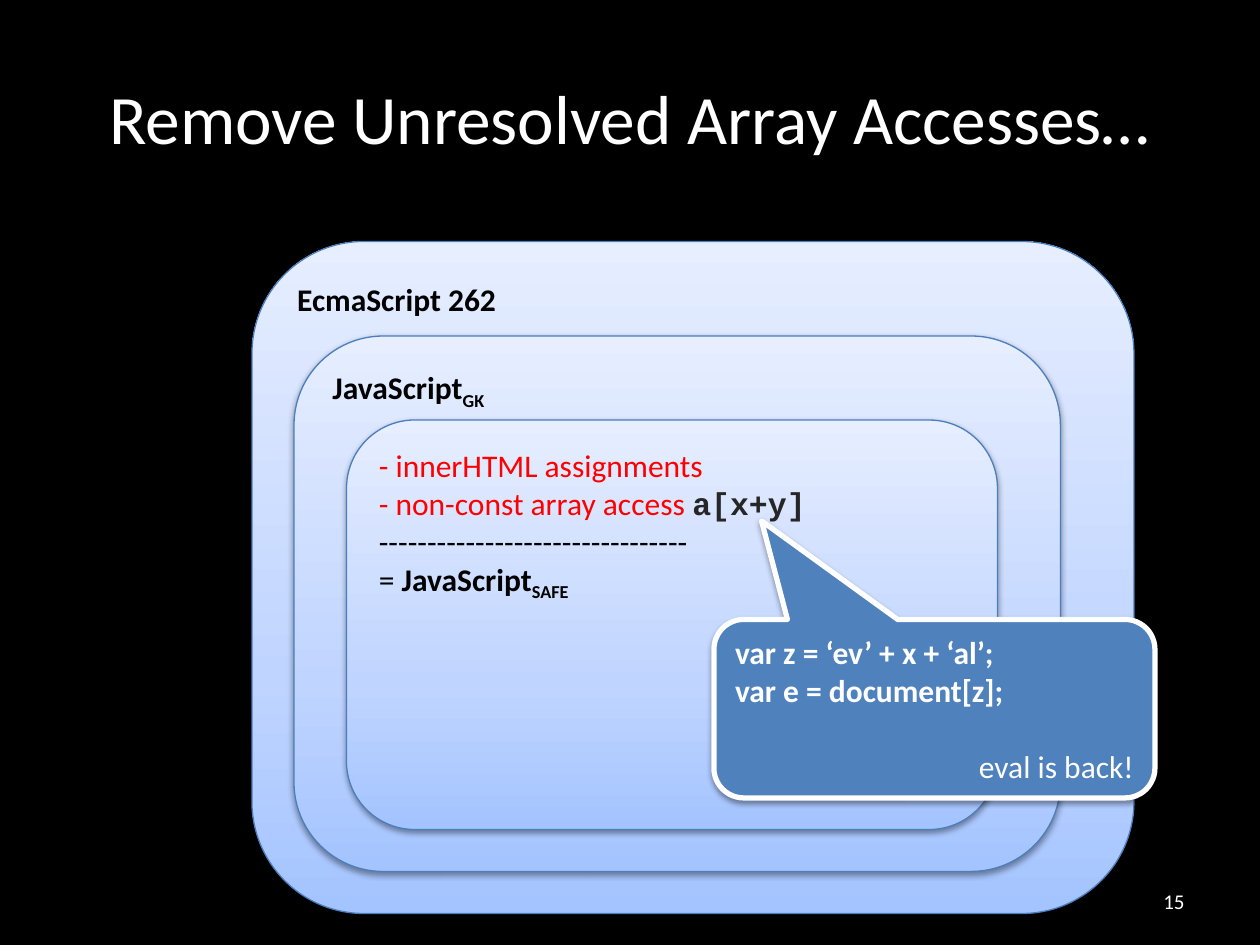
"""Build the slide on removing unresolved array accesses."""
from lxml.etree import SubElement
from pptx import Presentation
from pptx.dml.color import RGBColor
from pptx.enum.shapes import MSO_SHAPE as Shape
from pptx.enum.text import MSO_ANCHOR as Anchor, PP_ALIGN as Align
from pptx.oxml import parse_xml
from pptx.oxml.ns import nsdecls, qn
from pptx.util import Pt

BLACK = RGBColor(0, 0, 0)
WHITE = RGBColor(255, 255, 255)
RED = RGBColor(255, 0, 0)
DARK = RGBColor(0x26, 0x26, 0x26)
BLUE = RGBColor(0x4F, 0x81, 0xBD)
EDGE = RGBColor(0x4B, 0x7E, 0xBC)
GRADIENT = [(0, "A4C4FF"), (35, "BFD4FF"), (100, "E6EEFF")]

TITLE = "Remove Unresolved Array Accesses…"
PAGE_NUMBER = "15"
PLAIN, BOLD, SUB, CODE = "plain", "bold", "sub", "code"
LANGUAGES = [
    ((144, 138, 504, 384), [(BLACK, [("EcmaScript 262", BOLD)])]),
    ((168, 192, 438, 306), [(BLACK, [("JavaScript", BOLD), ("GK", SUB)])]),
    ((198, 240, 372, 234), [
        (RED, [("- innerHTML assignments", PLAIN)]),
        (RED, [("- non-const array access ", PLAIN), ("a[x+y]", CODE)]),
        (BLACK, [("-" * 32, PLAIN)]),
        (BLACK, [("= ", PLAIN), ("JavaScript", BOLD), ("SAFE", SUB)]),
    ]),
]
CALLOUT = (408, 354, 252, 102)
CALLOUT_TIP = (-0.392, -1.052, 0.167)
CALLOUT_LINES = [
    (WHITE, [("var z = ‘ev’ + x + ‘al’;", BOLD)]),
    (WHITE, [("var e = document[z];", BOLD)]),
    (WHITE, [("eval is back!", PLAIN)]),
]


def write(frame, lines, size=18, align=Align.LEFT, anchor=Anchor.TOP):
    frame.word_wrap = True
    frame.vertical_anchor = anchor
    for index, (color, spans) in enumerate(lines):
        para = frame.add_paragraph() if index else frame.paragraphs[0]
        para.alignment = align
        para.font.name, para.font.size = "Calibri", Pt(size)
        para.font.color.rgb = color
        for text, style in spans:
            span = para.add_run()
            span.text = text
            span.font.bold = style != PLAIN
            span.font.color.rgb = color
            if style == SUB:
                span._r.get_or_add_rPr().set("baseline", "-25000")
            elif style == CODE:
                span.font.name = "Courier New"
                span.font.color.rgb = DARK


def add_box(page, kind, place, edge, width):
    box = page.shapes.add_shape(kind, *map(Pt, place))
    box.line.color.rgb, box.line.width = edge, Pt(width)
    box.shadow.inherit = False
    effects = box._element.spPr.find(qn("a:effectLst"))
    shadow = SubElement(effects, qn("a:outerShdw"), blurRad=str(Pt(3.1)),
                        dist=str(Pt(1.6)), dir="5400000", rotWithShape="0")
    color = SubElement(shadow, qn("a:srgbClr"), val="000000")
    SubElement(color, qn("a:alpha"), val="38000")
    return box


def fill_gradient(box):
    stops = "".join(f'<a:gs pos="{position * 1000}"><a:srgbClr val="{color}"/></a:gs>'
                    for position, color in GRADIENT)
    box._element.spPr.find(qn("a:prstGeom")).addnext(parse_xml(
        f'<a:gradFill {nsdecls("a")} rotWithShape="1"><a:gsLst>{stops}</a:gsLst>'
        '<a:lin ang="16200000" scaled="0"/></a:gradFill>'))


def main():
    deck = Presentation()
    deck.slide_width, deck.slide_height = Pt(720), Pt(540)
    page = deck.slides.add_slide(deck.slide_layouts[5])
    page.background.fill.solid()
    page.background.fill.fore_color.rgb = BLACK

    title = page.shapes.title
    title.left, title.top, title.width, title.height = map(Pt, (36, 21.6, 648, 90))
    write(title.text_frame, [(WHITE, [(TITLE, PLAIN)])], 39.6, Align.CENTER, Anchor.MIDDLE)

    number = page.shapes.add_textbox(*map(Pt, (516, 500.5, 168, 28.75)))
    write(number.text_frame, [(WHITE, [(PAGE_NUMBER, PLAIN)])], 12, Align.RIGHT, Anchor.MIDDLE)

    for place, lines in LANGUAGES:
        box = add_box(page, Shape.ROUNDED_RECTANGLE, place, EDGE, 0.75)
        fill_gradient(box)
        write(box.text_frame, lines)

    callout = add_box(page, Shape.ROUNDED_RECTANGULAR_CALLOUT, CALLOUT, WHITE, 3)
    callout.fill.solid()
    callout.fill.fore_color.rgb = BLUE
    for index, value in enumerate(CALLOUT_TIP):
        callout.adjustments[index] = value
    write(callout.text_frame, CALLOUT_LINES, anchor=Anchor.MIDDLE)
    verdict = callout.text_frame.paragraphs[-1]
    verdict.alignment = Align.RIGHT
    verdict.space_before = Pt(22)

    deck.save("out.pptx")


if __name__ == "__main__":
    main()
